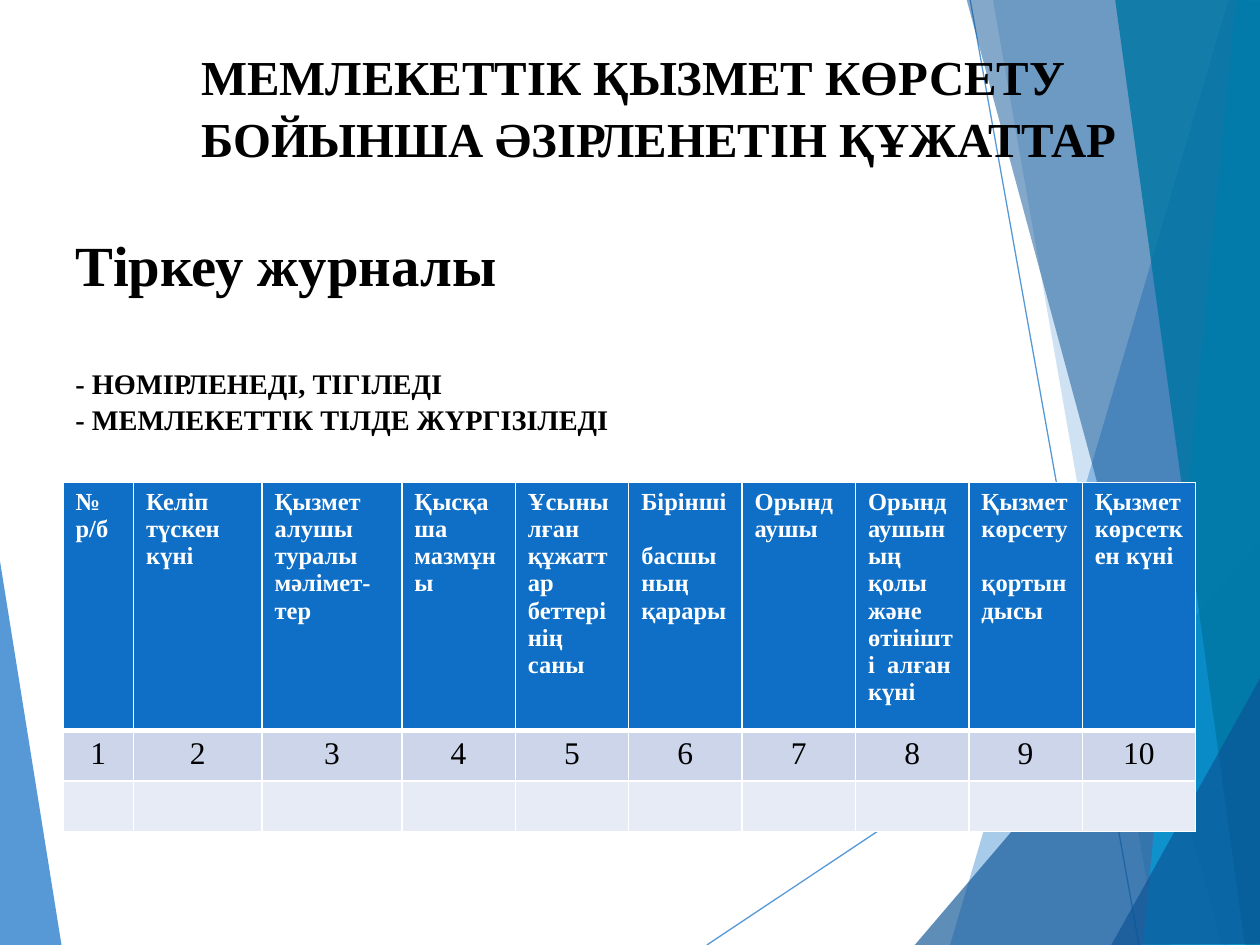
from lxml import etree
from pptx import Presentation
from pptx.dml.color import RGBColor
from pptx.enum.shapes import MSO_CONNECTOR
from pptx.enum.text import MSO_ANCHOR, PP_ALIGN
from pptx.oxml.ns import qn
from pptx.util import Inches, Pt

BLUE = RGBColor(0x0F, 0x6F, 0xC6)
NAVY = RGBColor(0x0B, 0x53, 0x94)
CYAN = RGBColor(0x00, 0x9D, 0xD9)
TEAL = RGBColor(0x00, 0x76, 0xA3)
WHITE = RGBColor(0xFF, 0xFF, 0xFF)
BLACK = RGBColor(0, 0, 0)
BAND_DARK = RGBColor(0xCC, 0xD5, 0xEA)
BAND_LIGHT = RGBColor(0xE7, 0xEB, 0xF5)
FONT = "Times New Roman"


def set_alpha(properties, percent):
    """Make the first colour inside a shape's properties partly transparent."""
    color = next(properties.iter(qn("a:srgbClr")))
    etree.SubElement(color, qn("a:alpha")).set("val", str(percent * 1000))


def add_run(para, text, size, color, bold):
    run = para.add_run()
    run.text = text
    run.font.name = FONT
    run.font.size = Pt(size)
    run.font.bold = bold
    run.font.color.rgb = color


deck = Presentation()
deck.slide_width, deck.slide_height = Inches(10), Inches(7.5)
slide = deck.slides.add_slide(deck.slide_layouts[6])
shapes = slide.shapes

# Background facets: colour, opacity in percent, corner points
left_facet = (BLUE, 70, [(-0.01, 4.39), (0.49, 7.51), (-0.01, 7.5)])
right_facets = [
    (BLUE, 36, [(9.75, 0), (7.54, 7.5), (10.02, 7.51), (10.01, 0.01)]),
    (BLUE, 20, [(7.88, -0.01), (9.19, 7.5), (10.01, 7.5), (10.01, -0.01)]),
    (NAVY, 66, [(7.26, 7.5), (10, 4.29), (10.01, 7.5)]),
    (NAVY, 50, [(7.67, -0.01), (9.7, 7.5), (10.01, 7.49), (10.01, -0.01)]),
    (CYAN, 70, [(9.81, -0.01), (9.07, 7.5), (10.01, 7.5), (10, -0.01)]),
    (TEAL, 82, [(8.85, -0.01), (9.88, 7.5), (10.02, 7.5), (10, -0.01)]),
    (NAVY, 66, [(8.82, 7.5), (10.02, 5.35), (10.02, 7.49)]),
]

for start, end in [((5.61, 7.5), (10.01, 4.57)), ((7.7, 0), (9.04, 7.5))]:
    line = shapes.add_connector(
        MSO_CONNECTOR.STRAIGHT, *map(Inches, start), *map(Inches, end))
    line.line.color.rgb = BLUE
    line.line.width = Pt(0.75)
    properties = line._element.spPr
    set_alpha(properties, 70)
    etree.SubElement(properties, qn("a:effectLst"))

for color, opacity, points in [left_facet, *right_facets]:
    corners = [(Inches(x), Inches(y)) for x, y in points]
    builder = shapes.build_freeform(*corners[0], scale=1.0)
    builder.add_line_segments(corners[1:], close=True)
    facet = builder.convert_to_shape()
    facet.shadow.inherit = False
    facet.fill.solid()
    facet.fill.fore_color.rgb = color
    facet.line.fill.background()
    set_alpha(facet._element.spPr, opacity)

# Title: text, size, space before in points, left indent in inches
title_lines = [
    ("МЕМЛЕКЕТТІК ҚЫЗМЕТ КӨРСЕТУ", 27.9, 0, 1),
    ("БОЙЫНША ӘЗІРЛЕНЕТІН ҚҰЖАТТАР", 27.9, 0, 1),
    ("Тіркеу журналы", 32.4, 33.7, 0),
    ("- НӨМІРЛЕНЕДІ, ТІГІЛЕДІ", 16.2, 38.5, 0),
    ("- МЕМЛЕКЕТТІК ТІЛДЕ ЖҮРГІЗІЛЕДІ", 16.2, 0, 0),
]
title_box = shapes.add_textbox(Inches(0.5), Inches(0.3), Inches(9.22), Inches(2.43))
frame = title_box.text_frame
frame.word_wrap = True
frame.vertical_anchor = MSO_ANCHOR.TOP
for index, (text, size, gap, indent) in enumerate(title_lines):
    para = frame.add_paragraph() if index else frame.paragraphs[0]
    para.line_spacing = 1.05
    para.space_before = Pt(gap)
    para._p.get_or_add_pPr().set("marL", str(Inches(indent)))
    add_run(para, text, size, BLACK, True)

# Register table
headers = [
    "№\nр/б", "Келіп түскен күні", "Қызмет алушы туралы мәлімет-\nтер",
    "Қысқаша мазмұны", "Ұсынылған  құжаттар беттерінің саны",
    "Бірінші  басшының қарары", "Орындаушы",
    "Орындаушының қолы және өтінішті  алған күні",
    "Қызмет көрсету  қортындысы", "Қызмет көрсеткен күні",
]
numbers = [str(number) for number in range(1, len(headers) + 1)]
column_widths = [0.56, 1.02, 1.11] + [0.9] * 7
row_heights = [1.81, 0.38, 0.39]
rows = [
    (headers, BLUE, WHITE, 14, True, PP_ALIGN.LEFT),
    (numbers, BAND_DARK, BLACK, 18, False, PP_ALIGN.CENTER),
    ([""] * len(headers), BAND_LIGHT, BLACK, 18, False, PP_ALIGN.LEFT),
]
table = shapes.add_table(
    len(rows), len(headers), Inches(0.5), Inches(3.83),
    Inches(sum(column_widths)), Inches(sum(row_heights))).table
for column, width in zip(table.columns, column_widths):
    column.width = Inches(width)
for row, height in zip(table.rows, row_heights):
    row.height = Inches(height)

for row_index, (texts, fill, color, size, bold, align) in enumerate(rows):
    for column_index, text in enumerate(texts):
        cell = table.cell(row_index, column_index)
        properties = cell._tc.get_or_add_tcPr()
        for side in ("L", "R", "T", "B"):
            thick = (row_index, side) in ((0, "B"), (1, "T"))
            border = etree.SubElement(properties, qn(f"a:ln{side}"))
            border.set("w", str(Pt(3 if thick else 1)))
            solid = etree.SubElement(border, qn("a:solidFill"))
            etree.SubElement(solid, qn("a:srgbClr")).set("val", str(WHITE))
        cell.fill.solid()
        cell.fill.fore_color.rgb = fill
        for index, part in enumerate(text.split("\n")):
            frame = cell.text_frame
            para = frame.add_paragraph() if index else frame.paragraphs[0]
            para.alignment = align
            if part:
                add_run(para, part, size, color, bold)

deck.save("out.pptx")
